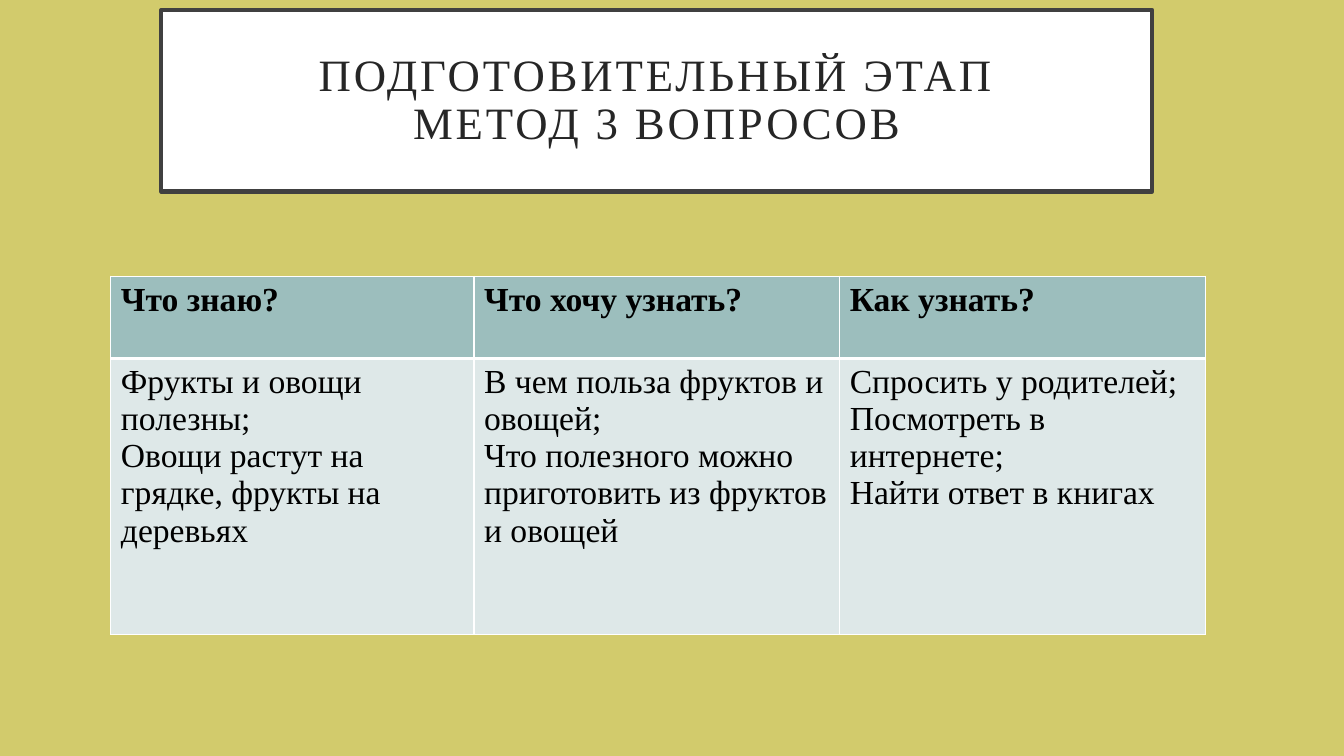
from lxml import etree
from pptx import Presentation
from pptx.dml.color import RGBColor
from pptx.enum.shapes import MSO_SHAPE
from pptx.enum.text import MSO_ANCHOR, PP_ALIGN
from pptx.oxml.ns import qn
from pptx.util import Pt

RECT = MSO_SHAPE.RECTANGLE
MIDDLE = MSO_ANCHOR.MIDDLE
CENTER = PP_ALIGN.CENTER

THEME = {
    "font": "Times New Roman",
    "background": "D2CB6C",
    "title_fill": "FFFFFF",
    "title_line": "404040",
    "title_text": "262626",
    "table_text": "000000",
    "header_fill": "9CBEBD",
    "body_fill": "DEE8E8",
    "border": "FFFFFF",
    "title_size": 32,
    "table_size": 24,
}


def format_runs(tf, size, color, bold):
    for p in tf.paragraphs:
        for r in p.runs:
            values = {"name": THEME["font"], "size": Pt(size), "bold": bold}
            for name, value in values.items():
                setattr(r.font, name, value)
            r.font.color.rgb = RGBColor.from_string(color)


def add_border(cell, side, width):
    ln = etree.SubElement(cell._tc.get_or_add_tcPr(), qn(f"a:ln{side}"), w=str(Pt(width)))
    fill = etree.SubElement(ln, qn("a:solidFill"))
    etree.SubElement(fill, qn("a:srgbClr"), val=THEME["border"])


prs = Presentation()
prs.slide_width, prs.slide_height = Pt(960), Pt(540)
s = prs.slides.add_slide(prs.slide_layouts[6])
s.background.fill.solid()
s.background.fill.fore_color.rgb = RGBColor.from_string(THEME["background"])

title = s.shapes.add_shape(RECT, Pt(115.2), Pt(7.2), Pt(707.8), Pt(129.6))
title.shadow.inherit = False
title.fill.solid()
title.fill.fore_color.rgb = RGBColor.from_string(THEME["title_fill"])
title.line.color.rgb = RGBColor.from_string(THEME["title_line"])
title.line.width = Pt(3)
tf = title.text_frame
frame_format = {
    "word_wrap": True,
    "vertical_anchor": MIDDLE,
    "margin_left": Pt(21.6),
    "margin_right": Pt(21.6),
    "margin_top": Pt(14.4),
    "margin_bottom": Pt(14.4),
}
for name, value in frame_format.items():
    setattr(tf, name, value)
p = tf.paragraphs[0]
p.text = "ПОДГОТОВИТЕЛЬНЫЙ ЭТАП\vМЕТОД 3 ВОПРОСОВ"
p.alignment = CENTER
p.line_spacing = 0.9
format_runs(tf, THEME["title_size"], THEME["title_text"], False)
for r in p.runs:
    r._r.get_or_add_rPr().set("spc", "200")

questions = [
    ("Что знаю?", "Фрукты и овощи полезны;\nОвощи растут на грядке, фрукты на деревьях"),
    ("Что хочу узнать?", "В чем польза фруктов и овощей;\nЧто полезного можно приготовить из фруктов и овощей"),
    ("Как узнать?", "Спросить у родителей;\nПосмотреть в интернете;\nНайти ответ в книгах"),
]
col_widths = [259.4, 261.2, 261.2]
row_heights = [58.8, 197]
row_fills = [THEME["header_fill"], THEME["body_fill"]]
row_borders = [
    {"L": 1, "R": 1, "T": 1, "B": 3},
    {"L": 1, "R": 1, "T": 3, "B": 1},
]

table = s.shapes.add_table(
    len(row_heights), len(col_widths), Pt(79.2), Pt(197.3),
    Pt(sum(col_widths)), Pt(sum(row_heights)),
).table
table.first_row = True
table.horz_banding = False
for row, height in zip(table.rows, row_heights):
    row.height = Pt(height)
for col, width in zip(table.columns, col_widths):
    col.width = Pt(width)

for i, texts in enumerate(questions):
    for j, text in enumerate(texts):
        cell = table.cell(j, i)
        cell.text = text
        format_runs(cell.text_frame, THEME["table_size"], THEME["table_text"], j == 0)
        for side, width in row_borders[j].items():
            add_border(cell, side, width)
        cell.fill.solid()
        cell.fill.fore_color.rgb = RGBColor.from_string(row_fills[j])

prs.save("out.pptx")
